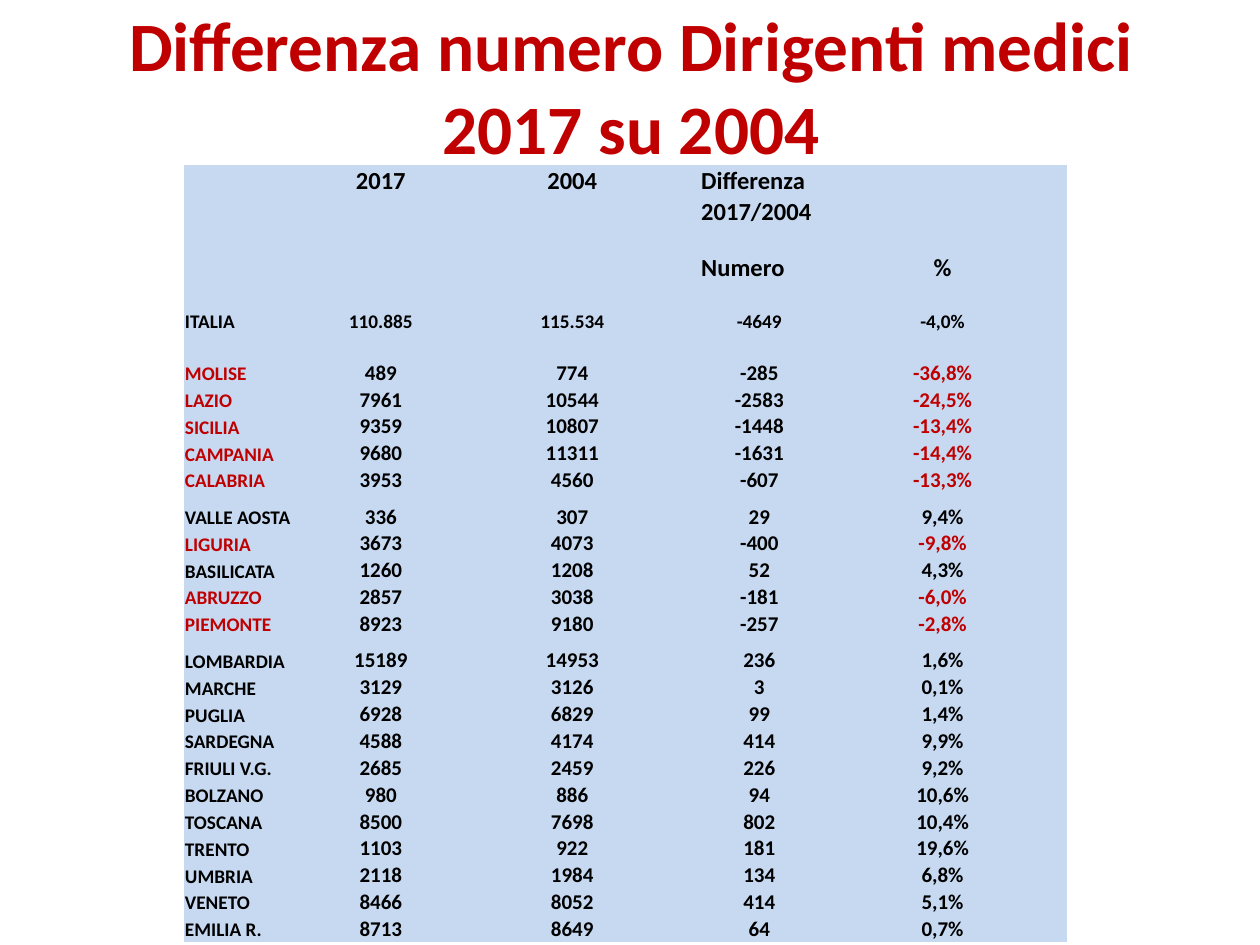
"""Build a slide with a table of Italian medical staff by region, 2017 against 2004."""
from lxml import etree
from pptx import Presentation
from pptx.dml.color import RGBColor
from pptx.enum.text import MSO_ANCHOR, MSO_AUTO_SIZE, PP_ALIGN
from pptx.oxml.ns import qn
from pptx.util import Pt

LEFT, CENTER = PP_ALIGN.LEFT, PP_ALIGN.CENTER
MIDDLE, BOTTOM = MSO_ANCHOR.MIDDLE, MSO_ANCHOR.BOTTOM
RED = RGBColor(0xC0, 0x00, 0x00)
BLACK = RGBColor(0x00, 0x00, 0x00)
PALE_BLUE = RGBColor(0xC6, 0xD9, 0xF1)
FONT = "Calibri"
NO_STYLE_NO_GRID = "{2D5ABB26-0587-4C30-8999-92F81FD0307C}"

TITLE = "Differenza numero Dirigenti medici 2017 su 2004"
HEADINGS = [
    (0, 1, "2017", CENTER),
    (0, 3, "2004", CENTER),
    (0, 5, "Differenza", LEFT),
    (1, 5, "2017/2004", LEFT),
    (3, 5, "Numero", LEFT),
    (3, 6, "%", CENTER),
]
ITALY = ("ITALIA", "110.885", "115.534", "-4649", "-4,0%")
REGIONS = [
    ("MOLISE", "489", "774", "-285", "-36,8%"),
    ("LAZIO", "7961", "10544", "-2583", "-24,5%"),
    ("SICILIA", "9359", "10807", "-1448", "-13,4%"),
    ("CAMPANIA", "9680", "11311", "-1631", "-14,4%"),
    ("CALABRIA", "3953", "4560", "-607", "-13,3%"),
    ("VALLE AOSTA", "336", "307", "29", "9,4%"),
    ("LIGURIA", "3673", "4073", "-400", "-9,8%"),
    ("BASILICATA", "1260", "1208", "52", "4,3%"),
    ("ABRUZZO", "2857", "3038", "-181", "-6,0%"),
    ("PIEMONTE", "8923", "9180", "-257", "-2,8%"),
    ("LOMBARDIA", "15189", "14953", "236", "1,6%"),
    ("MARCHE", "3129", "3126", "3", "0,1%"),
    ("PUGLIA", "6928", "6829", "99", "1,4%"),
    ("SARDEGNA", "4588", "4174", "414", "9,9%"),
    ("FRIULI V.G.", "2685", "2459", "226", "9,2%"),
    ("BOLZANO", "980", "886", "94", "10,6%"),
    ("TOSCANA", "8500", "7698", "802", "10,4%"),
    ("TRENTO", "1103", "922", "181", "19,6%"),
    ("UMBRIA", "2118", "1984", "134", "6,8%"),
    ("VENETO", "8466", "8052", "414", "5,1%"),
    ("EMILIA R.", "8713", "8649", "64", "0,7%"),
]
GROUP_STARTS = ("VALLE AOSTA", "LOMBARDIA")

COLUMN_WIDTHS = [77, 71.3, 5, 137.5, 4.3, 67.7, 141.8]
DATA_COLUMNS = [0, 1, 3, 5, 6]
ITALY_ROW, FIRST_REGION_ROW = 5, 7
HEADING_HEIGHT, ROW_HEIGHT, GROUP_HEIGHT = 5.8, 14.4, 20.9


def format_paragraph(paragraph, size, color, alignment):
    paragraph.alignment = alignment
    paragraph.font.name = FONT
    paragraph.font.size = Pt(size)
    paragraph.font.bold = True
    paragraph.font.color.rgb = color


def write_cell(cell, text, size, color, alignment):
    cell.text = text
    format_paragraph(cell.text_frame.paragraphs[0], size, color, alignment)


def write_record(table, row, record, value_size, alert_color):
    for position, (column, text) in enumerate(zip(DATA_COLUMNS, record)):
        is_name = position == 0
        color = alert_color if column in (0, 6) else BLACK
        write_cell(table.cell(row, column), text, 11 if is_name else value_size,
                   color, LEFT if is_name else CENTER)


def add_title(slide):
    title = slide.shapes.title
    title.left, title.top, title.width, title.height = Pt(36.7), Pt(3.6), Pt(648), Pt(90)
    frame = title.text_frame
    frame.text = TITLE
    frame.word_wrap = True
    frame.auto_size = MSO_AUTO_SIZE.NONE
    frame.vertical_anchor = MIDDLE
    format_paragraph(frame.paragraphs[0], 39.6, RED, CENTER)


def add_staff_table(slide):
    heights = [HEADING_HEIGHT] + [ROW_HEIGHT] * (FIRST_REGION_ROW - 1)
    heights += [GROUP_HEIGHT if region[0] in GROUP_STARTS else ROW_HEIGHT for region in REGIONS]
    table = slide.shapes.add_table(
        len(heights), len(COLUMN_WIDTHS), Pt(105), Pt(94.3),
        Pt(sum(COLUMN_WIDTHS)), Pt(sum(heights))).table
    table.first_row = table.horz_banding = False
    table._tbl.tblPr.find(qn("a:tableStyleId")).text = NO_STYLE_NO_GRID
    for column, width in zip(table.columns, COLUMN_WIDTHS):
        column.width = Pt(width)
    for row, height in zip(table.rows, heights):
        row.height = Pt(height)

    for cell in table.iter_cells():
        cell.fill.solid()
        cell.fill.fore_color.rgb = PALE_BLUE
        cell.vertical_anchor = BOTTOM
        cell.margin_left = cell.margin_right = cell.margin_top = Pt(0.7)
        cell.margin_bottom = 0
    for row in (0, 1):
        table.cell(row, 5).merge(table.cell(row, 6))

    for row, column, text, alignment in HEADINGS:
        write_cell(table.cell(row, column), text, 14, BLACK, alignment)
    write_record(table, ITALY_ROW, ITALY, 11, BLACK)
    for row, region in enumerate(REGIONS, FIRST_REGION_ROW):
        write_record(table, row, region, 12, RED if region[-1].startswith("-") else BLACK)

    for cell in table.iter_cells():
        if not cell.text:
            paragraph = cell.text_frame.paragraphs[0]
            etree.SubElement(paragraph._p, qn("a:endParaRPr"), sz="400")


def main():
    presentation = Presentation()
    presentation.slide_width, presentation.slide_height = Pt(720), Pt(540)
    slide = presentation.slides.add_slide(presentation.slide_layouts[5])
    add_title(slide)
    add_staff_table(slide)
    presentation.save("out.pptx")


if __name__ == "__main__":
    main()
